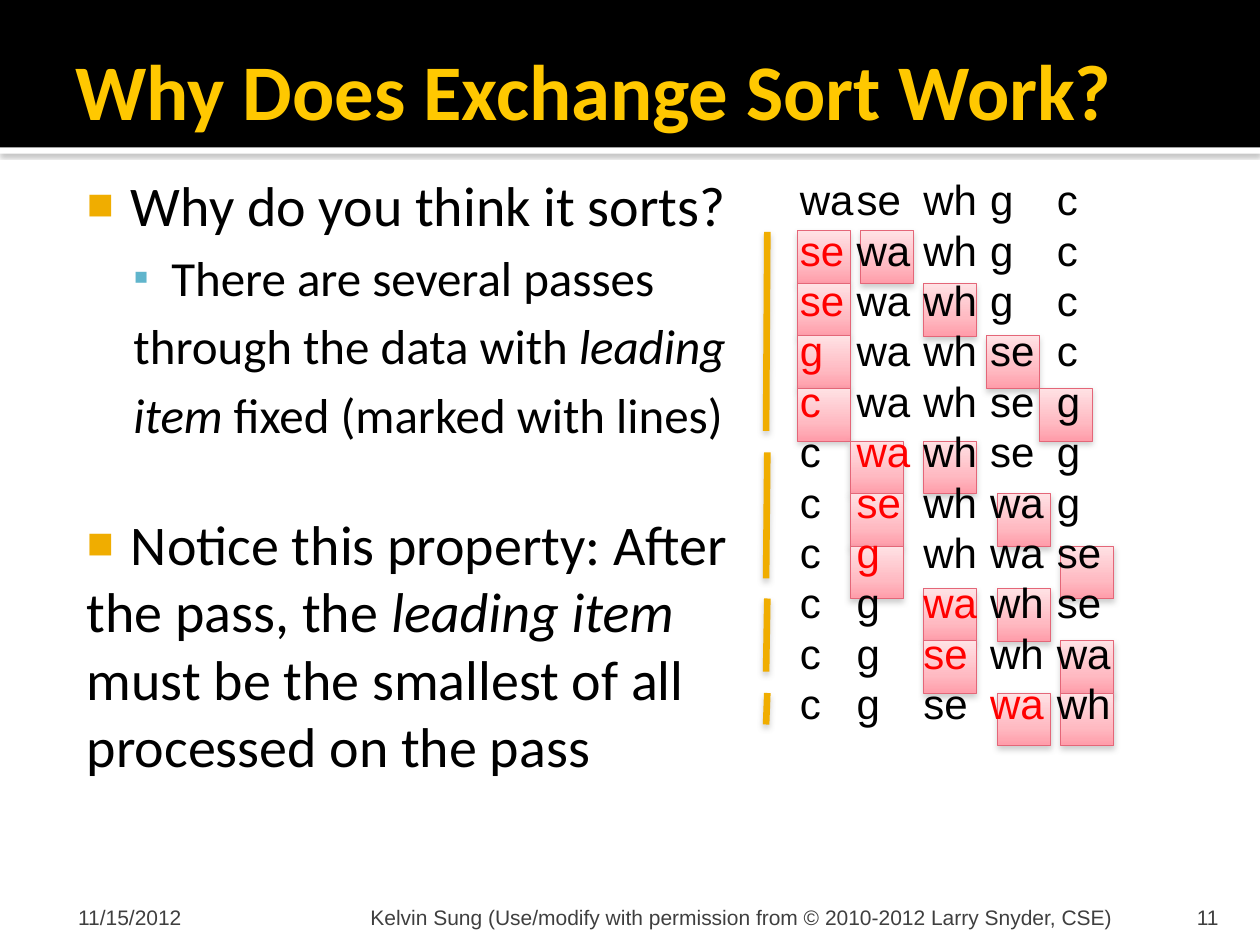
from collections import namedtuple

from pptx import Presentation
from pptx.dml.color import RGBColor
from pptx.enum.shapes import MSO_CONNECTOR, MSO_SHAPE
from pptx.enum.text import MSO_ANCHOR, PP_ALIGN
from pptx.oxml import parse_xml
from pptx.oxml.ns import nsdecls
from pptx.util import Inches, Pt

BLACK = RGBColor(0x00, 0x00, 0x00)
WHITE = RGBColor(0xFF, 0xFF, 0xFF)
RED = RGBColor(0xFF, 0x00, 0x00)
YELLOW = RGBColor(0xFF, 0xC8, 0x00)
AMBER = RGBColor(0xF0, 0xAD, 0x00)
TEAL = RGBColor(0x60, 0xB5, 0xCC)
GRAY = RGBColor(0x3F, 0x3F, 0x3F)
SHADOW = RGBColor(0x80, 0x80, 0x80)
ROSE = RGBColor(0xE4, 0x66, 0x78)
PINKS = [(0, RGBColor(0xFF, 0xE2, 0xE5)), (65, RGBColor(0xFF, 0xBA, 0xC2)),
         (100, RGBColor(0xFF, 0x9C, 0xA9))]

Box = namedtuple("Box", "left top width height")
Level = namedtuple("Level", "margin indent size before bullet color scale")
Pass = namedtuple("Pass", "top lead partners mark_top mark_bottom")

TOPIC = Level(0.48, -0.35, 32, 0, "■", AMBER, 80)
DETAIL = Level(0.8, -0.3, 28, 5.6, "▪", TEAL, 90)
TOPIC_GAP = 38

BODY = [
    (TOPIC, True, [("Why do you think it sorts?", False)]),
    (DETAIL, True, [("There are several passes", False)]),
    (DETAIL, False, [("through the data with ", False), ("leading", True)]),
    (DETAIL, False, [("item ", True), ("fixed (marked with lines)", False)]),
    (TOPIC, True, [("Notice this property: After", False)]),
    (TOPIC, False, [("the pass, the ", False), ("leading item", True)]),
    (TOPIC, False, [("must be the smallest of all", False)]),
    (TOPIC, False, [("processed on the pass", False)]),
]

SORT_ROWS = [
    ("wa se wh g c", None), ("se wa wh g c", 0), ("se wa wh g c", 0),
    ("g wa wh se c", 0), ("c wa wh se g", 0), ("c wa wh se g", 1),
    ("c se wh wa g", 1), ("c g wh wa se", 1), ("c g wa wh se", 2),
    ("c g se wh wa", 2), ("c g se wa wh", 3),
]
TAB_STOPS = [0.45, 0.98, 1.51, 2.04]

CELL = 0.42
ROW_STEP = 5 / 12
PASSES = [
    Pass(0.5, 0.08, [0.58, 1.08, 1.58, 2.0], 0.51, 2.09),
    Pass(2.17, 0.5, [1.08, 1.67, 2.17], 2.26, 3.26),
    Pass(3.34, 1.08, [1.67, 2.17], 3.42, 4.0),
    Pass(4.17, 1.67, [2.17], 4.17, 4.42),
]


def set_values(target, values):
    """Set each attribute of target from a dict."""
    for name, value in values.items():
        setattr(target, name, value)


def add_shadow(shape, alpha=38, blur=3.5, distance=2):
    """Give a shape or connector a soft shadow straight below."""
    shape._element.spPr.append(parse_xml(
        f'<a:effectLst {nsdecls("a")}><a:outerShdw blurRad="{Pt(blur)}" dist="{Pt(distance)}" '
        f'dir="5400000" rotWithShape="0"><a:srgbClr val="{SHADOW}">'
        f'<a:alpha val="{alpha * 1000}"/></a:srgbClr></a:outerShdw></a:effectLst>'))


def add_rectangle(slide, box):
    """Add a rectangle without an inherited shadow."""
    return slide.shapes.add_shape(MSO_SHAPE.RECTANGLE, *map(Inches, box))


def add_band(slide, box, color):
    """Add a plain filled rectangle."""
    shape = add_rectangle(slide, box)
    shape.fill.solid()
    shape.fill.fore_color.rgb = color
    shape.line.fill.background()
    return shape


def add_text_frame(slide, box, insets=(0.1, 0.05, 0.1, 0.05), anchor=MSO_ANCHOR.TOP):
    """Add a wrapping text box and return its frame."""
    frame = slide.shapes.add_textbox(*map(Inches, box)).text_frame
    sides = ("margin_left", "margin_top", "margin_right", "margin_bottom")
    set_values(frame, {"word_wrap": True, "vertical_anchor": anchor,
                       **dict(zip(sides, map(Inches, insets)))})
    return frame


def add_paragraph(frame, index):
    """Return the first paragraph, or a new one after it."""
    return frame.add_paragraph() if index else frame.paragraphs[0]


def add_run(paragraph, text, font, size, color, **values):
    """Add a formatted run."""
    run = paragraph.add_run()
    run.text = text
    set_values(run.font, {"name": font, "size": Pt(size), **values})
    run.font.color.rgb = color


def add_header(slide, box):
    """Place the black band, its white edge and the title."""
    edge = add_band(slide, Box(box.left, box.top + box.height, box.width, 0.05), WHITE)
    add_shadow(edge, 60, 2.5, 0.8)
    band = add_band(slide, box, BLACK)
    band.shadow.inherit = False
    title_box = Box(box.left + 0.5, box.top + 0.17, box.width - 1, 1.08)
    frame = add_text_frame(slide, title_box, (0.1, 0.05, 0.05, 0.05), MSO_ANCHOR.MIDDLE)
    add_run(frame.paragraphs[0], "Why Does Exchange Sort Work?", "Calibri", 45, YELLOW, bold=True)


def set_bullet(paragraph, level, bulleted):
    """Set the hanging indent and the optional bullet of a level."""
    properties = paragraph._p.get_or_add_pPr()
    properties.set("marL", str(Inches(level.margin)))
    properties.set("indent", str(Inches(level.indent)))
    if bulleted:
        for tag in (f'<a:buClr {nsdecls("a")}><a:srgbClr val="{level.color}"/></a:buClr>',
                    f'<a:buSzPct {nsdecls("a")} val="{level.scale * 1000}"/>',
                    f'<a:buFont {nsdecls("a")} typeface="Arial"/>',
                    f'<a:buChar {nsdecls("a")} char="{level.bullet}"/>'):
            properties.append(parse_xml(tag))


def add_body(slide, box):
    """Place the bulleted explanation."""
    frame = add_text_frame(slide, box, (0.06, 0.1, 0.1, 0.05))
    for index, (level, bulleted, runs) in enumerate(BODY):
        paragraph = add_paragraph(frame, index)
        starts_topic = index and bulleted and level is TOPIC
        paragraph.space_before = Pt(TOPIC_GAP if starts_topic else level.before)
        set_bullet(paragraph, level, bulleted)
        for text, italic in runs:
            add_run(paragraph, text, "Calibri", level.size, BLACK, italic=italic)


def add_footer(slide, box):
    """Place the date, the credit and the slide number."""
    parts = [
        ("11/15/2012", 0, 2.33, 0.12, 0.05, PP_ALIGN.LEFT),
        ("Kelvin Sung (Use/modify with permission from © 2010-2012 Larry Snyder, CSE)",
         2.39, 6.02, 0.05, 0.05, PP_ALIGN.LEFT),
        ("11", 8.47, 0.8, 0.1, 0.1, PP_ALIGN.RIGHT),
    ]
    for text, offset, width, left, right, alignment in parts:
        part_box = Box(box.left + offset, box.top, width, box.height)
        frame = add_text_frame(slide, part_box, (left, 0.05, right, 0), MSO_ANCHOR.BOTTOM)
        frame.paragraphs[0].alignment = alignment
        add_run(frame.paragraphs[0], text, "Arial", 12, GRAY)


def add_highlight(slide, left, top):
    """Place one pink cell behind a compared word."""
    shape = add_rectangle(slide, Box(left, top, CELL, CELL))
    stops = "".join(f'<a:gs pos="{position * 1000}"><a:srgbClr val="{color}"/></a:gs>'
                    for position, color in PINKS)
    shape._element.spPr.insert(2, parse_xml(
        f'<a:gradFill {nsdecls("a")}><a:gsLst>{stops}</a:gsLst>'
        '<a:lin ang="5400000" scaled="0"/></a:gradFill>'))
    shape.line.color.rgb = ROSE
    shape.line.width = Pt(0.5)
    add_shadow(shape)


def add_pass_mark(slide, left, top, bottom):
    """Place the line that marks one pass."""
    line = slide.shapes.add_connector(
        MSO_CONNECTOR.STRAIGHT, *map(Inches, (left, top, left - 0.01, bottom)))
    line.line.color.rgb = AMBER
    line.line.width = Pt(3.78)
    add_shadow(line)


def add_sort_trace(slide, box):
    """Place the rows of the sort with their highlights and pass marks."""
    for step in PASSES:
        for row, partner in enumerate(step.partners):
            for column in (step.lead, partner):
                add_highlight(slide, box.left + column, box.top + step.top + row * ROW_STEP)
    frame = add_text_frame(slide, box)
    tabs = "".join(f'<a:tab pos="{Inches(stop)}" algn="l"/>' for stop in TAB_STOPS)
    for index, (words, leading) in enumerate(SORT_ROWS):
        paragraph = add_paragraph(frame, index)
        paragraph._p.get_or_add_pPr().append(
            parse_xml(f'<a:tabLst {nsdecls("a")}>{tabs}</a:tabLst>'))
        for column, word in enumerate(words.split()):
            text = f"\t{word}" if column else word
            add_run(paragraph, text, "Arial", 24, RED if column == leading else BLACK)
    for step in PASSES:
        add_pass_mark(slide, box.left - 0.16, box.top + step.mark_top, box.top + step.mark_bottom)


def main():
    """Build and save the slide."""
    presentation = Presentation()
    set_values(presentation, {"slide_width": Inches(10), "slide_height": Inches(7.5)})
    slide = presentation.slides.add_slide(presentation.slide_layouts[6])
    add_header(slide, Box(0, 0, 10, 1.17))
    add_body(slide, Box(0.5, 1.25, 9, 5.67))
    add_footer(slide, Box(0.5, 7.08, 9.27, 0.3))
    add_sort_trace(slide, Box(6.25, 1.33, 3, 4.54))
    presentation.save("out.pptx")


if __name__ == "__main__":
    main()
